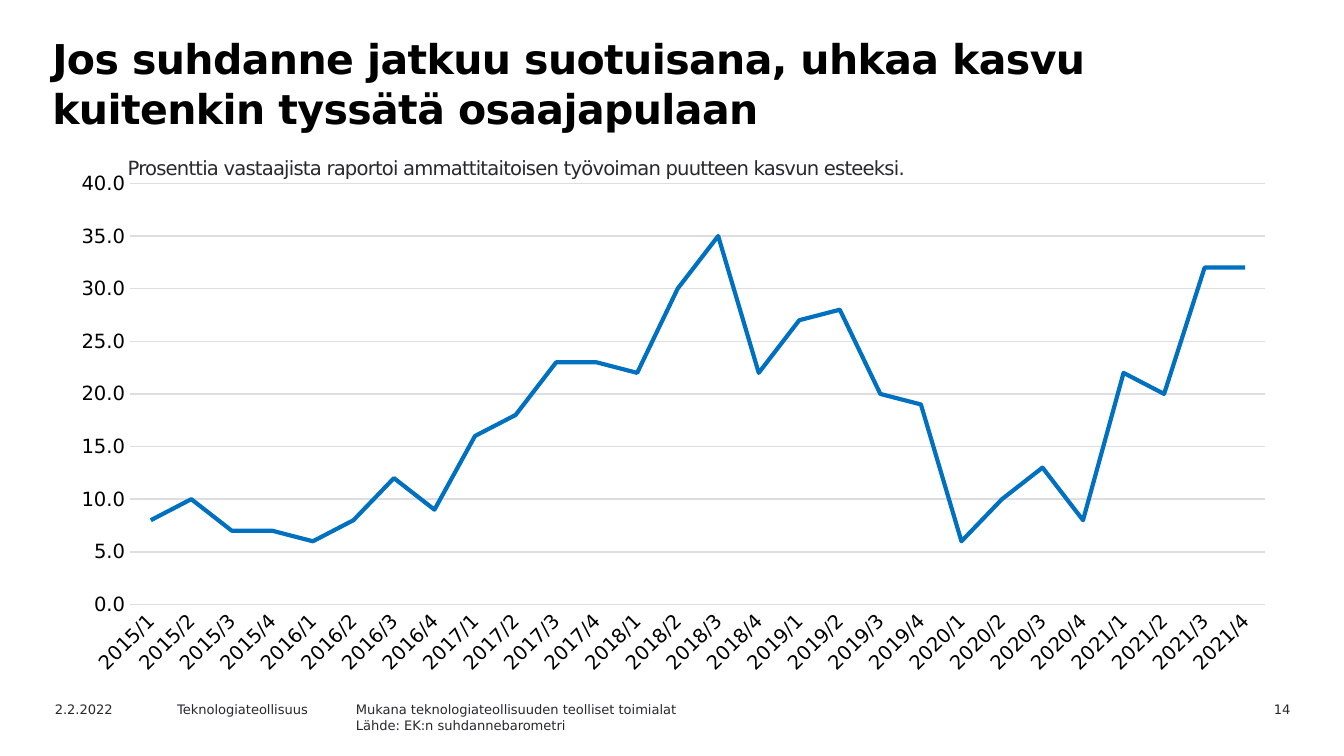
from lxml import etree
from pptx import Presentation
from pptx.chart.data import CategoryChartData
from pptx.dml.color import RGBColor
from pptx.enum import chart as ch, text as tx
from pptx.oxml import ns
from pptx.util import Inches, Pt

FONT = "DejaVu Sans"
HUES = {"title": "000000", "text": "29282E", "grid": "DEDDE1", "line": "0070C0"}
SHARES = [8, 10, 7, 7, 6, 8, 12, 9, 16, 18, 23, 23, 22, 30,
          35, 22, 27, 28, 20, 19, 6, 10, 13, 8, 22, 20, 32, 32]
QUARTERS = [f"{year}/{part}" for year in range(2015, 2022) for part in range(1, 5)]
PLOT = {"x": 0.06, "y": 0.04, "w": 0.92, "h": 0.81}  # shares of the chart frame


def hue(name):
    return RGBColor.from_string(HUES[name])


def style(font, size, color, bold=False):
    font.name, font.size, font.bold = FONT, Pt(size), bold
    font.color.rgb = hue(color)


def add_text(slide, area, lines, size=7, color="text", bold=False,
             inset=(0.1, 0.05), align=tx.PP_ALIGN.LEFT, pitch=None, track=0):
    """Add a text box; pitch is the line height and track the letter spacing, in points."""
    box = slide.shapes.add_textbox(*map(Inches, area))
    frame = box.text_frame
    frame.word_wrap = True
    frame.margin_left = frame.margin_right = Inches(inset[0])
    frame.margin_top = frame.margin_bottom = Inches(inset[1])
    frame.text = "\n".join(lines)
    for para in frame.paragraphs:
        para.alignment = align
        if pitch:
            para.line_spacing = Pt(pitch)
        style(para.font, size, color, bold)
        if track:
            for run in para.runs:
                run.font._element.set("spc", str(round(track * 100)))
    return box


def place_plot(chart):
    """Fix the inner plot area inside the chart frame."""
    area = chart._chartSpace.find(".//" + ns.qn("c:plotArea"))
    for old in area.findall(ns.qn("c:layout")):
        area.remove(old)
    layout = etree.Element(ns.qn("c:layout"))
    manual = etree.SubElement(layout, ns.qn("c:manualLayout"))
    rules = {"layoutTarget": "inner", "xMode": "edge", "yMode": "edge", **PLOT}
    for tag, val in rules.items():
        etree.SubElement(manual, ns.qn("c:" + tag)).set("val", str(val))
    area.insert(0, layout)


def rule(line):
    line.color.rgb = hue("grid")
    line.width = Pt(0.75)


def add_lines(slide, area):
    data = CategoryChartData(number_format="0.0")
    data.categories = QUARTERS
    data.add_series("Series 1", SHARES)
    chart = slide.shapes.add_chart(
        ch.XL_CHART_TYPE.LINE, *map(Inches, area), data).chart
    chart.has_legend = chart.has_title = False
    style(chart.font, 10.5, "title")
    chart.plots[0].vary_by_categories = False
    place_plot(chart)

    # Series
    series = chart.plots[0].series[0]
    series.smooth = False
    series.marker.style = ch.XL_MARKER_STYLE.NONE
    series.format.line.color.rgb = hue("line")
    series.format.line.width = Pt(2.25)

    # Axes
    cat, val = chart.category_axis, chart.value_axis
    for axis in (cat, val):
        axis.major_tick_mark = axis.minor_tick_mark = ch.XL_TICK_MARK.NONE
        style(axis.tick_labels.font, 10.5, "title")
    rule(cat.format.line)
    slant = cat._element.find(".//" + ns.qn("a:bodyPr"))
    slant.set("rot", str(-45 * 60000))
    slant.set("vert", "horz")
    val.minimum_scale, val.maximum_scale, val.major_unit = 0, 40, 5
    val.format.line.fill.background()
    val.has_major_gridlines = True
    rule(val.major_gridlines.format.line)
    val.tick_labels.number_format = "0.0"
    val.tick_labels.number_format_is_linked = False


def main():
    # Widescreen slide, 16:9
    deck = Presentation()
    deck.slide_width = Inches(10)
    deck.slide_height = Inches(10) * 9 // 16
    slide = deck.slides.add_slide(deck.slide_layouts[6])

    # Title
    add_text(slide, (0.28, 0.19, 8.74, 0.92),
             ["Jos suhdanne jatkuu suotuisana, uhkaa kasvu kuitenkin tyssätä osaajapulaan"],
             size=22, color="title", bold=True, inset=(0.11, 0.05), pitch=27, track=-0.3)

    # Chart and its caption
    add_lines(slide, (0.42, 1.21, 9.18, 3.87))
    note = add_text(
        slide, (0.91, 1.12, 6.06, 0.26),
        ["Prosenttia vastaajista raportoi ammattitaitoisen työvoiman "
         "puutteen kasvun esteeksi."],
        size=10.5, inset=(0.04, 0.04), track=-0.4)
    note.text_frame.auto_size = tx.MSO_AUTO_SIZE.SHAPE_TO_FIT_TEXT

    # Footer
    footer = [
        (0.31, 1, ["2.2.2022"]),
        (1.22, 1.42, ["Teknologiateollisuus"]),
        (2.55, 3.25, ["Mukana teknologiateollisuuden teolliset toimialat",
                      "Lähde: EK:n suhdannebarometri"]),
    ]
    for left, width, lines in footer:
        add_text(slide, (left, 5.17, width, 0.18), lines)
    add_text(slide, (8.76, 5.17, 0.94, 0.18), ["14"], align=tx.PP_ALIGN.RIGHT)

    deck.save("out.pptx")


if __name__ == "__main__":
    main()
